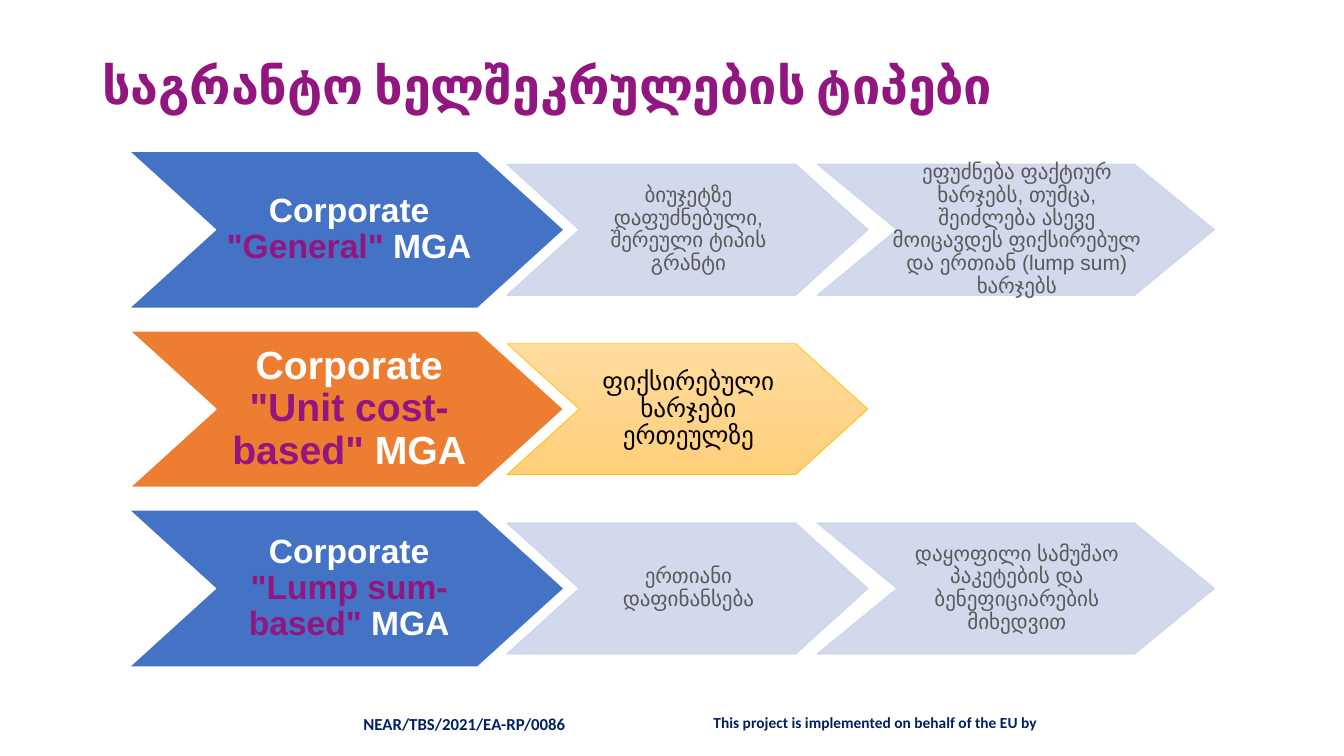
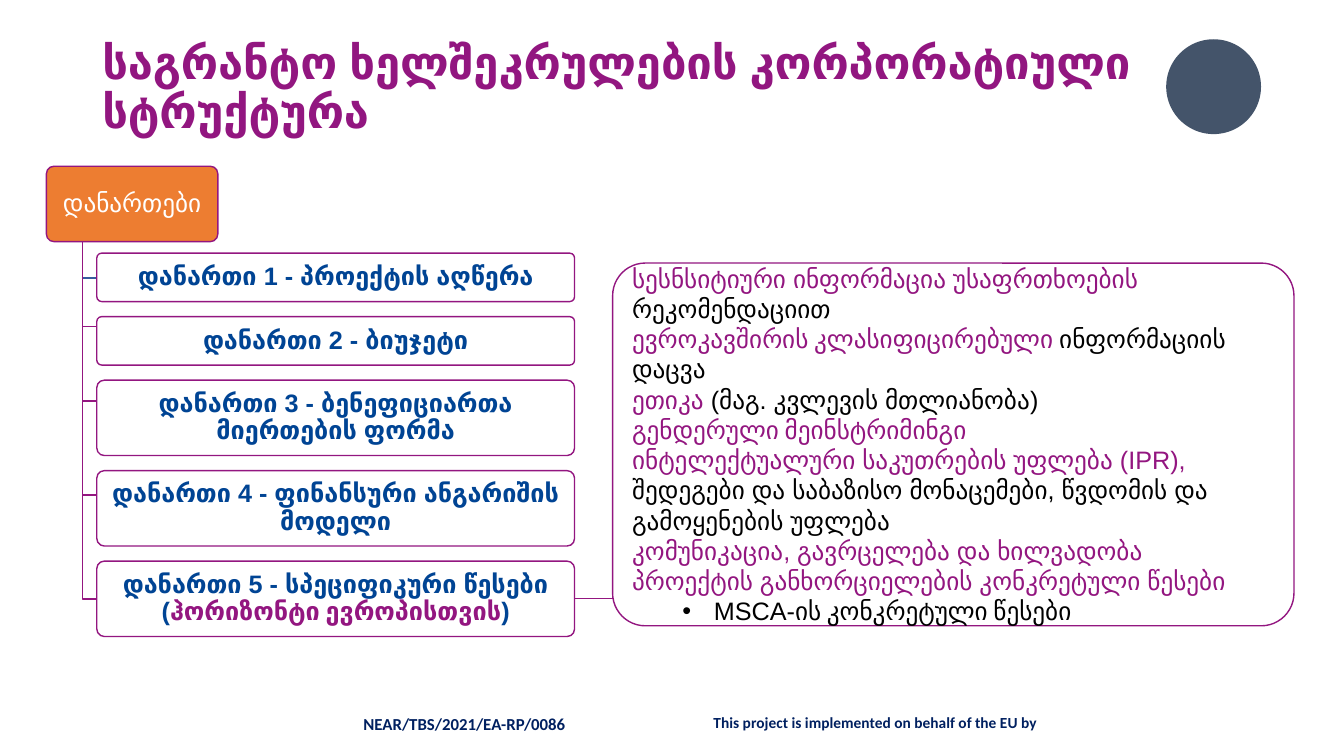
"""Build two slides on grant agreement types and their corporate structure."""
from dataclasses import dataclass
from typing import Any, NamedTuple, Optional

from lxml import etree
from pptx import Presentation
from pptx import util as u
from pptx.dml.color import RGBColor
from pptx.enum import shapes, text
from pptx.oxml import ns

Cm, Pt = u.Cm, u.Pt
CENTER, LEFT = text.PP_ALIGN.CENTER, text.PP_ALIGN.LEFT
MIDDLE, BOTTOM = text.MSO_ANCHOR.MIDDLE, text.MSO_ANCHOR.BOTTOM
ROUNDED = shapes.MSO_SHAPE.ROUNDED_RECTANGLE


@dataclass(frozen=True)
class Theme:
    """Colours, fonts and type sizes of the deck."""
    heading: str = "921680"
    accent: str = "931680"
    blue: str = "4472C4"
    orange: str = "ED7D31"
    pale: str = "CFD5EA"
    amber_light: str = "FFDB9E"
    amber: str = "FFD07C"
    amber_edge: str = "FFC000"
    annex: str = "004494"
    elbow: str = "365B9D"
    navy: str = "002060"
    slate: str = "44546A"
    grey: str = "595959"
    white: str = "FFFFFF"
    black: str = "000000"
    sans: str = "Arial"
    body: str = "Calibri"
    title_size: float = 36
    long_title_size: float = 32.4
    lead_size: float = 24
    big_lead_size: float = 28
    text_size: float = 18
    step_size: float = 15
    reference_size: float = 12
    footer_size: float = 11


T = Theme()


class Run(NamedTuple):
    """Text with its colour and font."""
    words: str
    color: str
    font: str = T.sans


@dataclass(frozen=True)
class Block:
    """Paragraphs of runs with their common format; insets in cm."""
    paragraphs: list[list[Run]]
    size: float
    bold: bool = False
    align: Any = CENTER
    anchor: Any = MIDDLE
    spacing: float = 0.9
    insets: tuple[float, float, float, float] = (0.25, 0.13, 0.25, 0.13)


class Column(NamedTuple):
    """Chevron column: place, notch and insets in cm."""
    left: float
    drop: float
    width: float
    height: float
    notch: float
    insets: tuple[float, float, float, float]


class Agreement(NamedTuple):
    """One row of chevrons."""
    lead: list[Run]
    lead_size: float
    details: list[str]
    highlighted: bool = False


class Annex(NamedTuple):
    """Annex box with the height of its elbow line."""
    label: list[Run]
    height: float
    elbow_y: float
    elbow_color: str = T.accent


STEP_INSETS = (1.88, 0.03, 1.83, 0.03)
COLUMNS = [
    Column(3.25, 0, 10.97, 3.96, 2.18, (2.31, 0.05, 2.18, 0.05)),
    Column(12.78, 0.33, 9.09, 3.3, 1.82, STEP_INSETS),
    Column(20.6, 0.33, 10, 3.3, 2.01, STEP_INSETS),
]
ROW_TOP, ROW_PITCH = 3.81, 4.52

AGREEMENTS = [
    Agreement([Run("Corporate ", T.white), Run('"General" ', T.accent), Run("MGA", T.white)], T.lead_size,
              ["ბიუჯეტზე დაფუძნებული, შერეული ტიპის გრანტი",
               "ეფუძნება ფაქტიურ ხარჯებს, თუმცა, შეიძლება ასევე მოიცავდეს "
               "ფიქსირებულ და ერთიან (lump sum) ხარჯებს"]),
    Agreement([Run("Corporate ", T.white), Run('"Unit cost-based"', T.accent), Run(" MGA", T.white)],
              T.big_lead_size, ["ფიქსირებული ხარჯები ერთეულზე"], True),
    Agreement([Run("Corporate", T.white), Run(' "Lump sum-based"', T.accent), Run(" MGA", T.white)], T.lead_size,
              ["ერთიანი დაფინანსება", "დაყოფილი სამუშაო პაკეტების და ბენეფიციარების მიხედვით"]),
]

ANNEX_LEFT, ANNEX_TOP, ANNEX_WIDTH, ANNEX_GAP = 2.44, 6.38, 12.04, 0.38
TRUNK_X, TRUNK_TOP = 2.08, 6.1
ANNEXES = [
    Annex([Run("დანართი 1 - პროექტის აღწერა", T.annex)], 1.22, 7.01, T.elbow),
    Annex([Run("დანართი 2 - ბიუჯეტი", T.annex)], 1.22, 8.23),
    Annex([Run("დანართი 3 - ბენეფიციართა მიერთების ფორმა", T.annex)], 1.9, 10.11),
    Annex([Run("დანართი 4 - ფინანსური ანგარიშის მოდელი", T.annex)], 1.9, 12.47),
    Annex([Run("დანართი 5 - სპეციფიკური წესები (", T.annex),
           Run("ჰორიზონტი ევროპისთვის", T.accent, T.body), Run(")", T.annex)], 1.9, 15.09),
]

RULES = [
    [Run("სესნსიტიური ინფორმაცია უსაფრთხოების ", T.accent), Run("რეკომენდაციით", T.black, T.body)],
    [Run("ევროკავშირის კლასიფიცირებული ", T.accent, T.body), Run("ინფორმაციის დაცვა", T.black)],
    [Run("ეთიკა ", T.accent), Run("(მაგ. კვლევის მთლიანობა)", T.black)],
    [Run("გენდერული მეინსტრიმინგი", T.accent, T.body)],
    [Run("ინტელექტუალური საკუთრების უფლება (IPR), ", T.accent),
     Run("შედეგები და საბაზისო მონაცემები, წვდომის და გამოყენების უფლება", T.black)],
    [Run("კომუნიკაცია, გავრცელება და ხილვადობა", T.accent)],
    [Run("პროექტის განხორციელების კონკრეტული წესები", T.accent)],
    [Run("MSCA-", T.black), Run("ის კონკრეტული წესები", T.black, T.body)],
]


def apply(target: Any, values: dict[str, Any]) -> None:
    """Set each format value on the target."""
    for name, value in values.items():
        setattr(target, name, value)


def write(shape: Any, block: Block) -> None:
    """Fill a shape with formatted text."""
    frame = shape.text_frame
    margins = zip(("margin_left", "margin_top", "margin_right", "margin_bottom"), block.insets)
    apply(frame, {"word_wrap": True, "vertical_anchor": block.anchor,
                  **{name: Cm(inset) for name, inset in margins}})
    for index, runs in enumerate(block.paragraphs):
        paragraph = frame.add_paragraph() if index else frame.paragraphs[0]
        apply(paragraph, {"alignment": block.align, "line_spacing": block.spacing})
        for words, color, font in runs:
            run = paragraph.add_run()
            run.text = words
            apply(run.font, {"size": Pt(block.size), "bold": block.bold, "name": font})
            run.font.color.rgb = RGBColor.from_string(color)


def paint(shape: Any, fill: Optional[str], line: Optional[str], weight: float = 1) -> None:
    """Give a shape a plain fill and outline without shadow."""
    shape.shadow.inherit = False
    if fill:
        shape.fill.solid()
        shape.fill.fore_color.rgb = RGBColor.from_string(fill)
    else:
        shape.fill.background()
    if line:
        shape.line.color.rgb = RGBColor.from_string(line)
        shape.line.width = Pt(weight)
    else:
        shape.line.fill.background()


def add_text(slide: Any, box: tuple[float, ...], block: Block) -> Any:
    """Add a text box."""
    area = slide.shapes.add_textbox(*map(Cm, box))
    write(area, block)
    return area


def add_preset(slide: Any, kind: Any, box: tuple[float, ...], fill: Optional[str], line: Optional[str],
               rounding: Optional[float] = None) -> Any:
    """Add a painted preset shape."""
    shape = slide.shapes.add_shape(kind, *map(Cm, box))
    if rounding is not None:
        shape.adjustments[0] = rounding
    paint(shape, fill, line)
    return shape


def add_outline(slide: Any, points: list[tuple[float, float]], close: bool) -> Any:
    """Add a freeform through points in cm."""
    first, *rest = [(Cm(x), Cm(y)) for x, y in points]
    builder = slide.shapes.build_freeform(*first)
    builder.add_line_segments(rest, close=close)
    return builder.convert_to_shape()


def add_chevron(slide: Any, column: Column, row_top: float) -> Any:
    """Add a chevron of a column in a row."""
    left, top = column.left, row_top + column.drop
    right, bottom, middle = left + column.width, top + column.height, top + column.height / 2
    shoulder = right - column.notch
    return add_outline(slide, [(left, top), (shoulder, top), (right, middle), (shoulder, bottom),
                               (left, bottom), (left + column.notch, middle)], True)


def make_translucent(shape: Any) -> None:
    """Make the fill and outline ninety per cent opaque."""
    for color in shape.element.spPr.iter(ns.qn("a:srgbClr")):
        etree.SubElement(color, ns.qn("a:alpha")).set("val", "90000")


def add_bullet(paragraph: Any) -> None:
    """Indent a paragraph and give it a round bullet."""
    paragraph.level = 1
    properties = paragraph._p.get_or_add_pPr()
    properties.set("marL", str(Cm(2.06)))
    properties.set("indent", str(Cm(-0.79)))
    etree.SubElement(properties, ns.qn("a:buFont")).set("typeface", T.sans)
    etree.SubElement(properties, ns.qn("a:buChar")).set("char", "•")


def start_slide(deck: Any, title: str, box: tuple[float, ...], size: float, font: str, anchor: Any,
                bottom_inset: float) -> Any:
    """Add a slide with the common footer and title."""
    slide = deck.slides.add_slide(deck.slide_layouts[6])
    add_text(slide, (17.98, 17.93, 8.41, 0.61),
             Block([[Run("This project is implemented on behalf of the EU by", T.navy, T.body)]],
                   T.footer_size, True, LEFT, text.MSO_ANCHOR.TOP, 1.07, (0, 0, 0, 0)))
    add_text(slide, (8.81, 17.73, 5.79, 1.02),
             Block([[Run("NEAR/TBS/2021/EA-RP/0086", T.navy, T.body)]], T.reference_size, True, spacing=1))
    heading = add_text(slide, box, Block([[Run(title, T.heading, font)]], size, True, LEFT, anchor,
                                         insets=(0.25, 0.13, 0.25, bottom_inset)))
    heading.text_frame.paragraphs[0].runs[0].font._element.set("spc", "-10")
    return slide


def build_types(deck: Any) -> None:
    """Build the slide of agreement types."""
    slide = start_slide(deck, "საგრანტო ხელშეკრულების ტიპები", (2.33, 1.4, 29.21, 1.52),
                        T.title_size, T.body, BOTTOM, 0)
    for row, agreement in enumerate(AGREEMENTS):
        top = ROW_TOP + row * ROW_PITCH
        marked = agreement.highlighted
        lead = add_chevron(slide, COLUMNS[0], top)
        paint(lead, T.orange if marked else T.blue, T.white, 1.5 if marked else 1)
        write(lead, Block([agreement.lead], agreement.lead_size, True, insets=COLUMNS[0].insets))
        for column, words in zip(COLUMNS[1:], agreement.details):
            detail = add_chevron(slide, column, top)
            if marked:
                paint(detail, T.amber, T.amber_edge, 0.5)
                detail.fill.gradient()
                detail.fill.gradient_angle = 270
                for stop, color in zip(detail.fill.gradient_stops, (T.amber_light, T.amber)):
                    stop.color.rgb = RGBColor.from_string(color)
            else:
                paint(detail, T.pale, T.pale)
                make_translucent(detail)
            write(detail, Block([[Run(words, T.black if marked else T.grey)]],
                                T.text_size if marked else T.step_size, insets=column.insets))


def build_structure(deck: Any) -> None:
    """Build the slide of the corporate structure."""
    slide = start_slide(deck, "საგრანტო ხელშეკრულების კორპორატიული სტრუქტურა", (2.33, 1.02, 29.21, 2.44),
                        T.long_title_size, T.sans, MIDDLE, 0.13)
    add_preset(slide, shapes.MSO_SHAPE.OVAL, (29.39, 0.99, 2.39, 2.39), T.slate, None)
    annexes = add_preset(slide, ROUNDED, (1.17, 4.19, 4.32, 1.9), T.orange, T.accent, 0.1)
    write(annexes, Block([[Run("დანართები", T.white)]], T.text_size, insets=(0.1, 0.08, 0.1, 0.08)))
    top = ANNEX_TOP
    for annex in ANNEXES:
        elbow = add_outline(slide, [(TRUNK_X, TRUNK_TOP), (TRUNK_X, annex.elbow_y),
                                    (ANNEX_LEFT, annex.elbow_y)], False)
        paint(elbow, None, annex.elbow_color)
        card = add_preset(slide, ROUNDED, (ANNEX_LEFT, top, ANNEX_WIDTH, annex.height), T.white, T.accent, 0.1)
        write(card, Block([annex.label], T.text_size, True, insets=(0.1, 0.06, 0.1, 0.06)))
        top += annex.height + ANNEX_GAP
    link = slide.shapes.add_connector(shapes.MSO_CONNECTOR.STRAIGHT, Cm(14.48), Cm(15.09), Cm(15.44), Cm(15.09))
    link.begin_connect(card, 3)
    link.line.color.rgb = RGBColor.from_string(T.accent)
    link.line.width = Pt(0.5)
    etree.SubElement(link.element.spPr, ns.qn("a:effectLst"))
    rules = add_preset(slide, ROUNDED, (15.44, 6.63, 17.17, 9.14), None, T.accent, 0.09)
    write(rules, Block(RULES, T.text_size, align=LEFT, spacing=1, insets=(0.25, 0.13, 0, 0.13)))
    add_bullet(rules.text_frame.paragraphs[-1])


def main() -> None:
    """Build and save the deck."""
    deck = Presentation()
    apply(deck, {"slide_width": Cm(33.87), "slide_height": Cm(19.05)})
    build_types(deck)
    build_structure(deck)
    deck.save("out.pptx")


if __name__ == "__main__":
    main()
